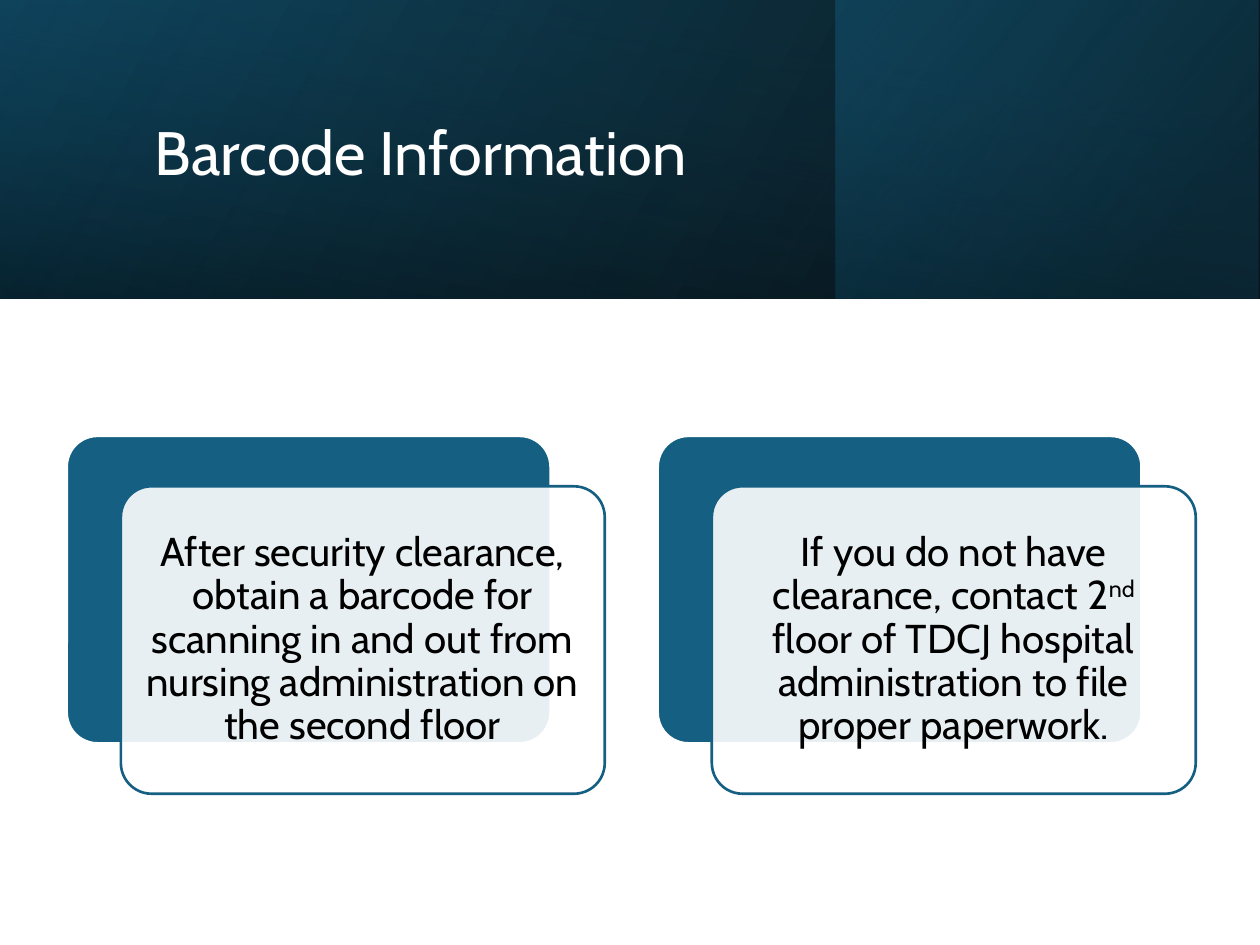
from lxml import etree
from pptx import Presentation
from pptx import util as u
from pptx.dml.color import RGBColor
from pptx.enum import shapes, text
from pptx.oxml import ns

C = {"white": "FFFFFF", "black": "000000", "teal": "156082", "deep": "104862", "navy": "0B3041"}
FONT = "Cabin"

prs = Presentation()
prs.slide_width, prs.slide_height = u.Inches(10), u.Inches(7.5)
W, H = prs.slide_width, prs.slide_height
s = prs.slides.add_slide(prs.slide_layouts[6])


def add_box(kind, x, y, w, h, fill=None, line=None):
    sp = s.shapes.add_shape(kind, int(x), int(y), int(w), int(h))
    sp.shadow.inherit = False
    if fill:
        sp.fill.solid()
        sp.fill.fore_color.rgb = RGBColor.from_string(C[fill])
    if line:
        sp.line.color.rgb = RGBColor.from_string(C[line])
        sp.line.width = u.Pt(1.5)
    else:
        sp.line.fill.background()
    return sp


def add_runs(tf, runs, size, color, align):
    for k, v in {"word_wrap": True, "vertical_anchor": text.MSO_ANCHOR.MIDDLE}.items():
        setattr(tf, k, v)
    p = tf.paragraphs[0]
    p.alignment, p.line_spacing = align, 0.9
    for words, baseline in runs:
        r = p.add_run()
        r.text = words
        for k, v in {"name": FONT, "size": u.Pt(size)}.items():
            setattr(r.font, k, v)
        r.font.color.rgb = RGBColor.from_string(C[color])
        if baseline:
            r.font._element.set("baseline", str(baseline * 1000))


band = 2.37 * H / 7.5
bands = [
    (0, 0, W, band, 0, 330, [(0, "black", 96), (100, "deep", 100)]),
    (0.663 * W, 0, 0.336 * W, band, 0, 320, [(19, "navy", 68), (100, "teal", 48)]),
    ((W - band) / 2, (band - W) / 2, band, W, 270, 350, [(23, "deep", 16), (99, "black", 45)]),
]
for x, y, w, h, rot, angle, stops in bands:
    sp = add_box(shapes.MSO_SHAPE.RECTANGLE, x, y, w, h)
    sp.rotation = rot
    spPr = sp._element.spPr
    spPr.find(ns.qn("a:xfrm")).set("flipH", "1")
    grad = etree.Element(ns.qn("a:gradFill"), rotWithShape="1")
    gs_list = etree.SubElement(grad, ns.qn("a:gsLst"))
    for pos, color, alpha in stops:
        gs = etree.SubElement(gs_list, ns.qn("a:gs"), pos=str(pos * 1000))
        clr = etree.SubElement(gs, ns.qn("a:srgbClr"), val=C[color])
        etree.SubElement(clr, ns.qn("a:alpha"), val=str(alpha * 1000))
    etree.SubElement(grad, ns.qn("a:lin"), ang=str(angle * 60000), scaled="0")
    spPr.find(ns.qn("a:prstGeom")).addnext(grad)

title = s.shapes.add_textbox(int(0.113 * W), int(0.05 * H), int(0.797 * W), int(0.23 * H))
add_runs(title.text_frame, [("Barcode Information", 0)], 35, "white", text.PP_ALIGN.LEFT)

cards = [
    [("After security clearance, obtain a barcode for scanning in and out from "
      "nursing administration on the second floor", 0)],
    [("If you do not have clearance, contact 2", 0), ("nd", 30),
     (" floor of TDCJ hospital administration to file proper paperwork.", 0)],
]
left, top, pitch = 0.053 * W, 3.46 * H / 7.5, 0.469 * W
card_w, card_h = 0.384 * W, 2.44 * H / 7.5
dx, dy = 0.043 * W, 0.4 * H / 7.5
for col, runs in enumerate(cards):
    x = left + col * pitch
    back = add_box(shapes.MSO_SHAPE.ROUNDED_RECTANGLE, x, top, card_w, card_h, "teal", "white")
    front = add_box(shapes.MSO_SHAPE.ROUNDED_RECTANGLE, x + dx, top + dy, card_w, card_h, "white", "teal")
    for sp in (back, front):
        sp.adjustments[0] = 0.1
    clr = front._element.spPr.find(ns.qn("a:solidFill")).find(ns.qn("a:srgbClr"))
    etree.SubElement(clr, ns.qn("a:alpha"), val="90000")
    tf = front.text_frame
    for side in ("left", "right", "top", "bottom"):
        setattr(tf, f"margin_{side}", u.Inches(0.1))
    add_runs(tf, runs, 23, "black", text.PP_ALIGN.CENTER)

prs.save("out.pptx")
